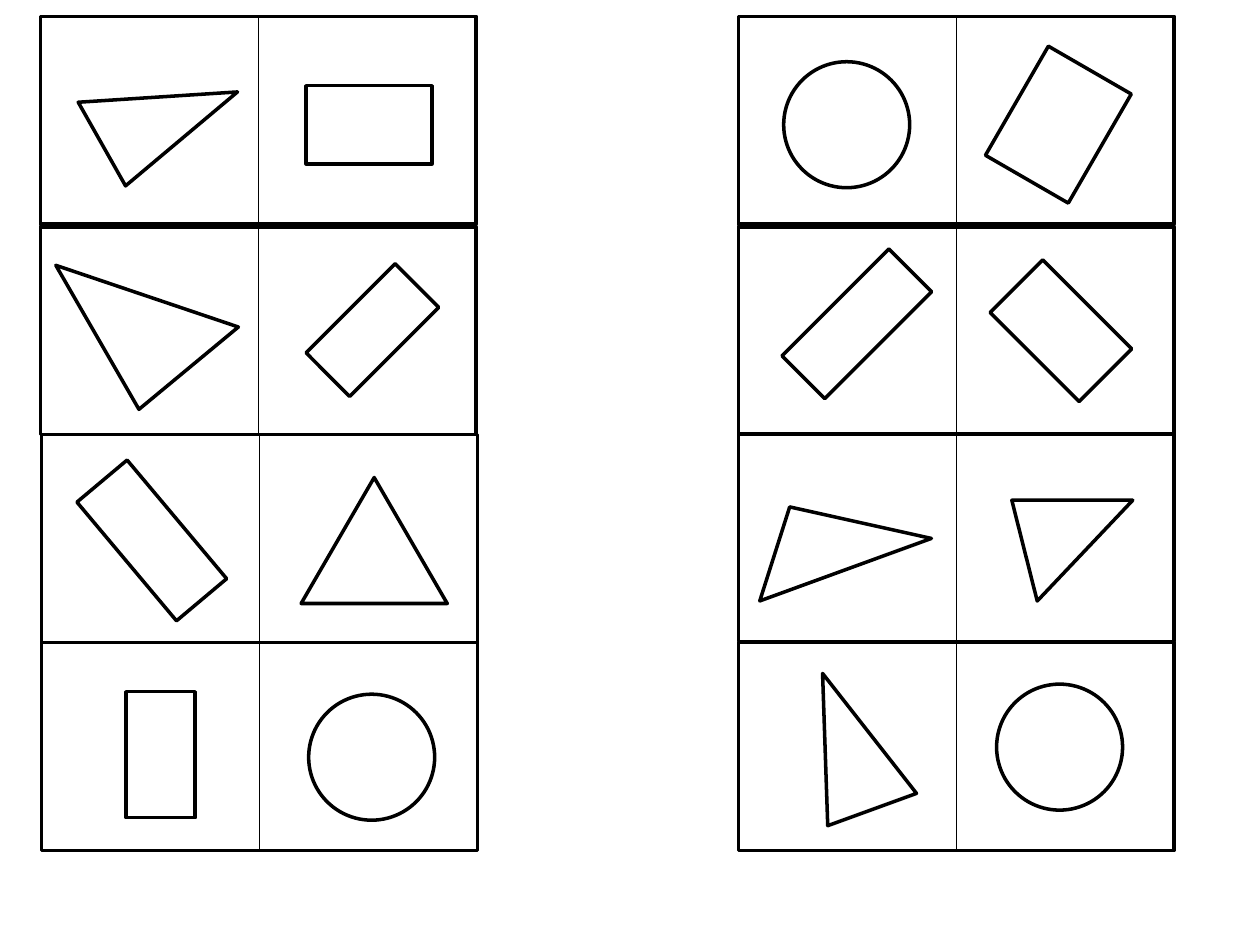
from dataclasses import dataclass

from lxml import etree
from pptx import Presentation
from pptx.dml.color import RGBColor
from pptx.enum.shapes import MSO_CONNECTOR, MSO_SHAPE
from pptx.oxml.ns import qn
from pptx.util import Inches, Pt

RECTANGLE = MSO_SHAPE.RECTANGLE
TRIANGLE = MSO_SHAPE.ISOSCELES_TRIANGLE
OVAL = MSO_SHAPE.OVAL
STRAIGHT = MSO_CONNECTOR.STRAIGHT

SLIDE_WIDTH, SLIDE_HEIGHT = Inches(10), Inches(7.5)
COLUMNS = 100
UNIT = SLIDE_WIDTH / COLUMNS
CARD_WIDTH, CARD_HEIGHT = 34.6, 16.5


@dataclass(frozen=True)
class Theme:
    """Colours and line widths of the domino sheet."""

    ink: RGBColor = RGBColor(0, 0, 0)
    outline: Pt = Pt(2)
    divider: Pt = Pt(0.75)


@dataclass(frozen=True)
class Figure:
    """A geometric figure, placed in grid units from its card's corner."""

    preset: MSO_SHAPE
    box: tuple
    rotation: int = 0
    apex: float = 0.5


THEME = Theme()

DOMINOES = [
    ((3.2, 1.3), [Figure(TRIANGLE, (3, 3.1, 11.6, 7.5), 320, 0.12),
                  Figure(RECTANGLE, (21.1, 5.5, 10, 6.2))]),
    ((3.2, 18), [Figure(TRIANGLE, (2.3, 1.2, 13.2, 10.1), 60, 0.87),
                 Figure(RECTANGLE, (23.9, 3.2, 4.9, 10), 45)]),
    ((3.3, 34.5), [Figure(RECTANGLE, (2.6, 5.8, 12.3, 5.2), 50),
                   Figure(TRIANGLE, (20.6, 3.4, 11.6, 10))]),
    ((3.3, 51), [Figure(RECTANGLE, (6.7, 3.9, 5.5, 10)),
                 Figure(OVAL, (21.2, 4.1, 10, 10))]),
    ((58.6, 1.3), [Figure(OVAL, (3.6, 3.6, 10, 10)),
                   Figure(RECTANGLE, (21.6, 3.6, 7.6, 10), 30)]),
    ((58.6, 18), [Figure(RECTANGLE, (7, 1.7, 4.8, 12), 45),
                  Figure(RECTANGLE, (20.6, 5.3, 10, 5.9), 45)]),
    ((58.6, 34.4), [Figure(TRIANGLE, (0.2, 4.8, 14.5, 6.2), 340, 0.33),
                    Figure(TRIANGLE, (21.7, 5.3, 9.6, 8), 180, 0.79)]),
    ((58.6, 51), [Figure(TRIANGLE, (4.9, 2.1, 7.5, 11.5), 340),
                  Figure(OVAL, (20.5, 3.3, 10, 10))]),
]


def grid(*lengths):
    """Convert grid units to slide lengths."""
    return [round(length * UNIT) for length in lengths]


def style_line(line, width):
    """Apply the ink colour and a width to a line."""
    line.fill.solid()
    formats = {line: {"width": width}, line.fill.fore_color: {"rgb": THEME.ink}}
    for target, values in formats.items():
        for attribute, value in values.items():
            setattr(target, attribute, value)


def add_outline(shapes, preset, box):
    """Add an unfilled, outlined preset shape in a grid box."""
    outline = shapes.add_shape(preset, *grid(*box))
    outline.shadow.inherit = False
    outline.fill.background()
    style_line(outline.line, THEME.outline)
    return outline


def add_divider(shapes, card, box):
    """Join the middles of a card's top and bottom edges."""
    left, top, width, height = box
    middle = left + width / 2
    divider = shapes.add_connector(STRAIGHT, *grid(middle, top, middle, top + height))
    divider.begin_connect(card, 0)
    divider.end_connect(card, 2)
    style_line(divider.line, THEME.divider)
    properties = divider._element.find(qn("p:spPr"))
    etree.SubElement(properties, qn("a:effectLst"))


def add_figure(shapes, figure, box):
    """Place one geometric figure relative to its card's box."""
    left, top, width, height = figure.box
    drawing = add_outline(shapes, figure.preset, (box[0] + left, box[1] + top, width, height))
    drawing.rotation = figure.rotation
    if figure.preset == TRIANGLE:
        drawing.adjustments[0] = figure.apex


def add_domino(slide, box, figures):
    """Build one domino card with its divider and two figures."""
    shapes = slide.shapes.add_group_shape().shapes
    card = add_outline(shapes, RECTANGLE, box)
    add_divider(shapes, card, box)
    for figure in figures:
        add_figure(shapes, figure, box)


def main():
    """Build the sheet of shape dominoes."""
    deck = Presentation()
    deck.slide_width, deck.slide_height = SLIDE_WIDTH, SLIDE_HEIGHT
    slide = deck.slides.add_slide(deck.slide_layouts[6])
    for corner, figures in DOMINOES:
        add_domino(slide, (*corner, CARD_WIDTH, CARD_HEIGHT), figures)
    deck.save("out.pptx")


if __name__ == "__main__":
    main()
